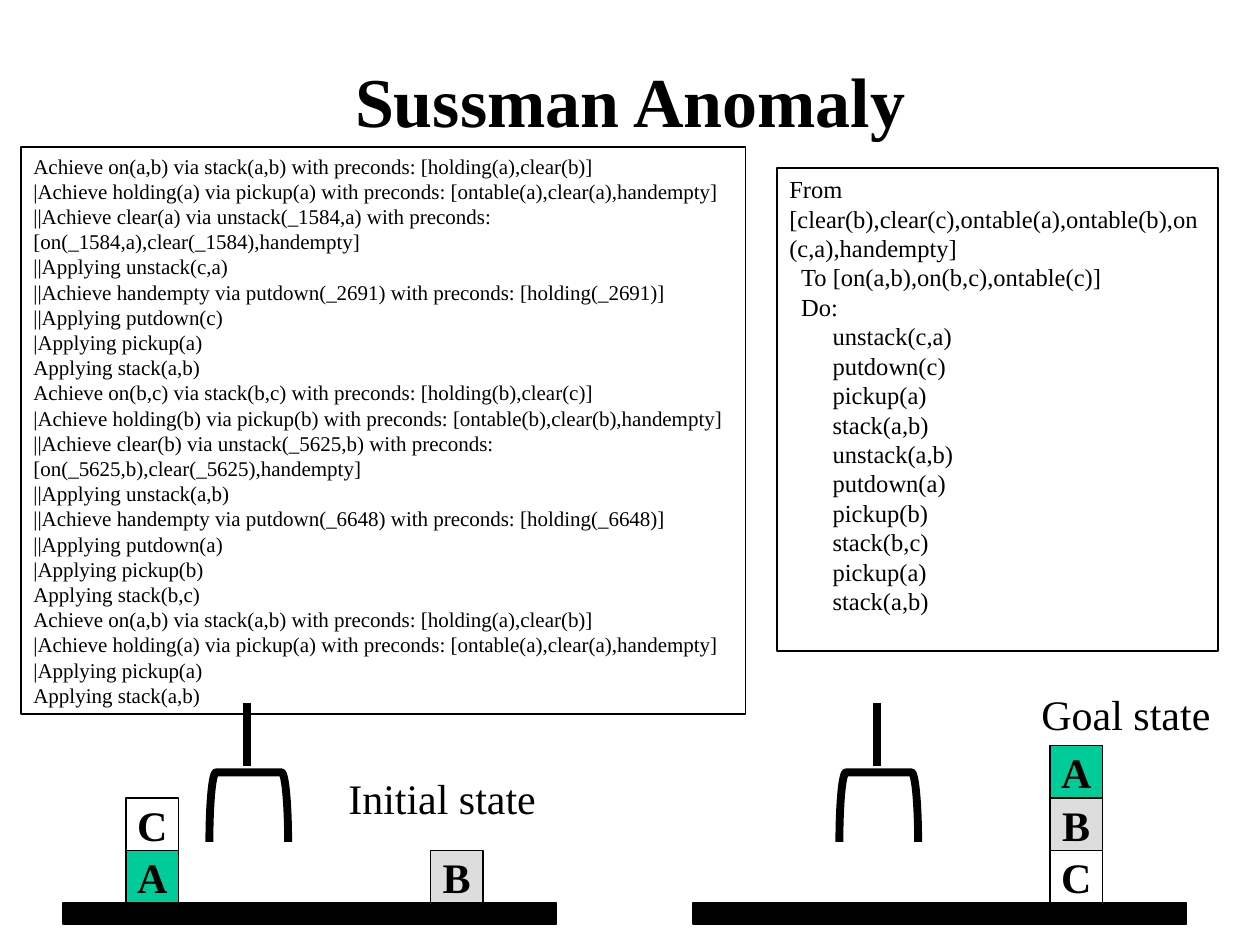
from lxml.etree import SubElement
from pptx import Presentation
from pptx.dml.color import RGBColor
from pptx.enum.shapes import MSO_CONNECTOR, MSO_SHAPE
from pptx.enum.text import MSO_ANCHOR, PP_ALIGN
from pptx.oxml.ns import qn
from pptx.util import Pt

PX = 9525  # EMU per px, 96 px to the inch
FONT = "Times New Roman"
COLORS = {"ink": "000000", "A": "00CC99", "B": "DDDDDD", "C": None}
BLOCK = 40
TABLE_TOP = 688

TRACE = [
    "Achieve on(a,b) via stack(a,b) with preconds: [holding(a),clear(b)]",
    "|Achieve holding(a) via pickup(a) with preconds: [ontable(a),clear(a),handempty]",
    "||Achieve clear(a) via unstack(_1584,a) with preconds: [on(_1584,a),clear(_1584),handempty]",
    "||Applying unstack(c,a)",
    "||Achieve handempty via putdown(_2691) with preconds: [holding(_2691)]",
    "||Applying putdown(c)",
    "|Applying pickup(a)",
    "Applying stack(a,b)",
    "Achieve on(b,c) via stack(b,c) with preconds: [holding(b),clear(c)]",
    "|Achieve holding(b) via pickup(b) with preconds: [ontable(b),clear(b),handempty]",
    "||Achieve clear(b) via unstack(_5625,b) with preconds: [on(_5625,b),clear(_5625),handempty]",
    "||Applying unstack(a,b)",
    "||Achieve handempty via putdown(_6648) with preconds: [holding(_6648)]",
    "||Applying putdown(a)",
    "|Applying pickup(b)",
    "Applying stack(b,c)",
    "Achieve on(a,b) via stack(a,b) with preconds: [holding(a),clear(b)]",
    "|Achieve holding(a) via pickup(a) with preconds: [ontable(a),clear(a),handempty]",
    "|Applying pickup(a)",
    "Applying stack(a,b)",
]

# Lines of the plan by indent in px
PLAN = {
    0: ["From [clear(b),clear(c),ontable(a),ontable(b),on(c,a),handempty]"],
    9: ["To [on(a,b),on(b,c),ontable(c)]", "Do:"],
    33: ["unstack(c,a)", "putdown(c)", "pickup(a)", "stack(a,b)", "unstack(a,b)",
         "putdown(a)", "pickup(b)", "stack(b,c)", "pickup(a)", "stack(a,b)"],
}


def px(*lengths):
    return [n * PX for n in lengths]


def rgb(name):
    return RGBColor.from_string(COLORS[name])


def style_text(tf, size, bold=False, align=PP_ALIGN.LEFT):
    for p in tf.paragraphs:
        p.alignment = align
        for r in p.runs:
            r.font.name = FONT
            r.font.size = Pt(size)
            r.font.bold = bold
            r.font.color.rgb = rgb("ink")


def add_outlined(shapes, kind, box, fill=None, weight=0.75):
    sp = shapes.add_shape(kind, *px(*box))
    sp.shadow.inherit = False
    if fill and COLORS[fill]:
        sp.fill.solid()
        sp.fill.fore_color.rgb = rgb(fill)
    else:
        sp.fill.background()
    sp.line.color.rgb = rgb("ink")
    sp.line.width = Pt(weight)
    return sp


def add_text_panel(shapes, box, lines, size):
    """Outlined box with one paragraph for each (indent, text) pair."""
    tf = add_outlined(shapes, MSO_SHAPE.RECTANGLE, box).text_frame
    tf.word_wrap = True
    tf.vertical_anchor = MSO_ANCHOR.TOP
    tf.text = "\n".join(text for _, text in lines)
    style_text(tf, size)
    for p, (indent, _) in zip(tf.paragraphs, lines):
        if indent:
            p._p.get_or_add_pPr().set("marL", str(indent * PX))


def add_label(shapes, box, text):
    tf = shapes.add_textbox(*px(*box)).text_frame
    tf.word_wrap = False
    tf.text = text
    style_text(tf, 24)


def add_block(shapes, x, y, name):
    tf = add_outlined(shapes, MSO_SHAPE.RECTANGLE, (x, y, BLOCK, BLOCK), name).text_frame
    tf.word_wrap = False
    tf.vertical_anchor = MSO_ANCHOR.MIDDLE
    tf.text = name
    style_text(tf, 24, True, PP_ALIGN.CENTER)


def add_gripper(shapes, x):
    hand = add_outlined(shapes, MSO_SHAPE.RIGHT_BRACKET, (x - 25, 585, 53, 60), weight=4.5)
    hand.adjustments[0] = 0.095
    hand.rotation = 270
    hand._element.spPr.xfrm.set("flipV", "1")
    arm = shapes.add_connector(MSO_CONNECTOR.STRAIGHT, *px(x, 536, x, 584))
    arm.line.color.rgb = rgb("ink")
    arm.line.width = Pt(4.5)
    SubElement(arm._element.spPr, qn("a:effectLst"))


def add_world(slide, left, stacks):
    """Table, gripper and stacks, given as {x offset: names from bottom to top}."""
    shapes = slide.shapes.add_group_shape().shapes
    add_outlined(shapes, MSO_SHAPE.RECTANGLE, (left, TABLE_TOP, 376, 16), "ink")
    for dx, names in stacks.items():
        for level, name in enumerate(names, 1):
            add_block(shapes, left + dx, TABLE_TOP - level * BLOCK, name)
    add_gripper(shapes, left + 140)


def add_title(slide, box, text):
    title = slide.shapes.title
    title.left, title.top, title.width, title.height = px(*box)
    tf = title.text_frame
    tf.text = text
    tf.vertical_anchor = MSO_ANCHOR.MIDDLE
    style_text(tf, 40, True, PP_ALIGN.CENTER)


def main():
    prs = Presentation()
    prs.slide_width, prs.slide_height = px(960, 720)
    s = prs.slides.add_slide(prs.slide_layouts[5])
    add_title(s, (72, 16, 816, 120), "Sussman Anomaly")
    add_world(s, 48, {48: "AC", 280: "B"})
    add_label(s.shapes, (256, 584, 162, 48), "Initial state")
    add_label(s.shapes, (784, 520, 148, 48), "Goal state")
    add_text_panel(s.shapes, (16, 112, 552, 432), [(0, line) for line in TRACE], 12)
    plan = [(indent, line) for indent, lines in PLAN.items() for line in lines]
    add_text_panel(s.shapes, (592, 128, 336, 368), plan, 14)
    add_world(s, 528, {272: "CBA"})
    prs.save("out.pptx")


if __name__ == "__main__":
    main()
